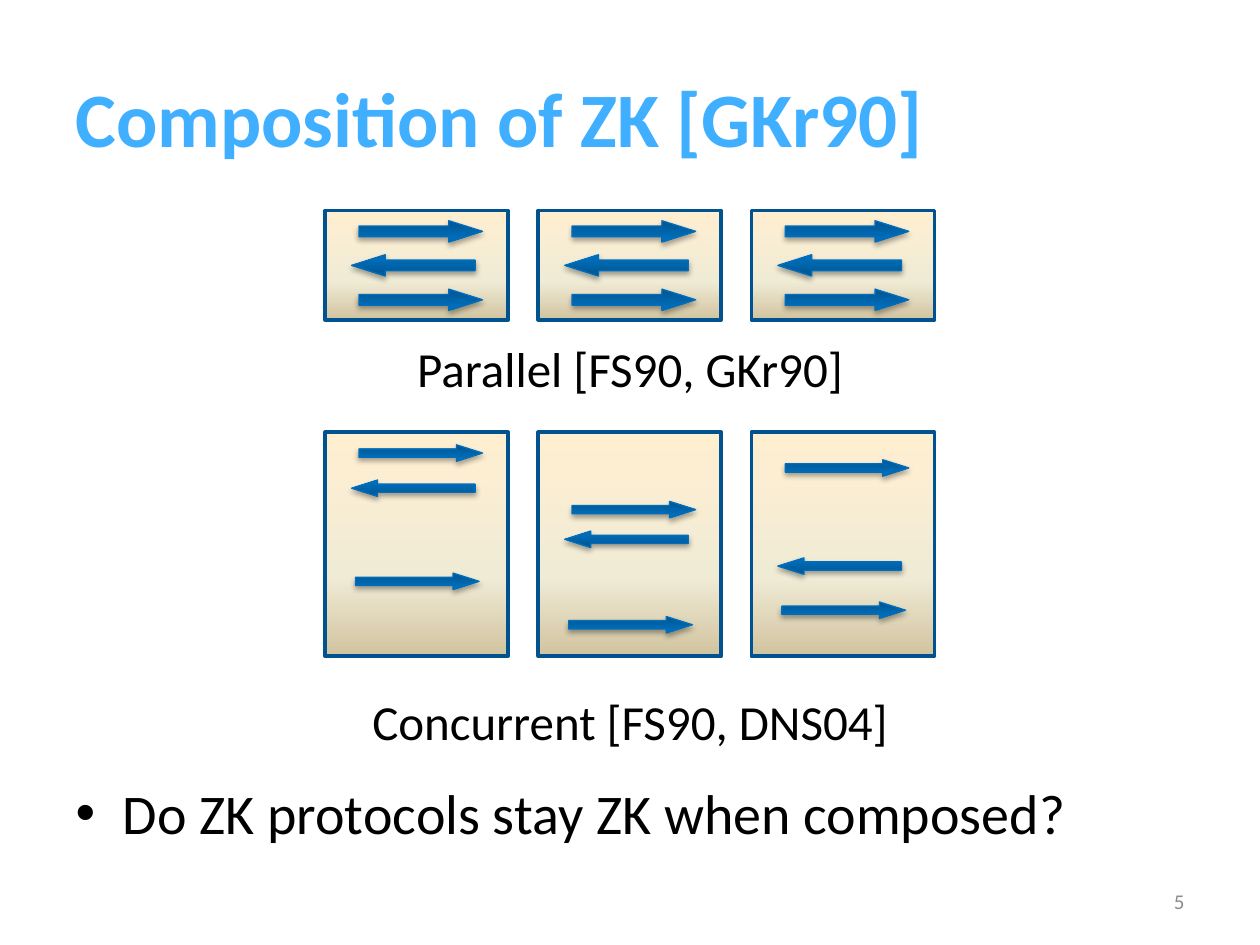
from copy import deepcopy

from lxml import etree
from pptx import Presentation
from pptx.dml.color import RGBColor
from pptx.enum.shapes import MSO_SHAPE
from pptx.enum.text import MSO_ANCHOR, PP_ALIGN
from pptx.oxml.ns import qn
from pptx.util import Pt

RECT, ARROW = MSO_SHAPE.RECTANGLE, MSO_SHAPE.LEFT_ARROW
LEFT, CENTER, RIGHT = PP_ALIGN.LEFT, PP_ALIGN.CENTER, PP_ALIGN.RIGHT
MIDDLE = MSO_ANCHOR.MIDDLE

COLORS = {"title": "40AFFF", "text": "000000", "number": "8C8C8C",
          "box line": "00538E", "arrow line": "006EBC", "shadow": "000000"}

# Content
TITLE = "Composition of ZK [GKr90]"
QUESTION = "Do ZK protocols stay ZK when composed?"
NUMBER = "5"

# Each session lists its messages as (x, y) offsets in its box;
# directions alternate, starting to the right
OUT, BACK, LAST = 19.3, 15.1, 17.4
PARALLEL = [(OUT, 5.8), (BACK, 25.3), (OUT, 44.9)]
COMPOSITIONS = [
    {"caption": "Parallel [FS90, GKr90]", "caption top": 190.1,
     "top": 120.3, "height": 62.6, "arrow height": 12.2,
     "sessions": [PARALLEL] * 3},
    {"caption": "Concurrent [FS90, DNS04]", "caption top": 391.7,
     "top": 247, "height": 128, "arrow height": 9.4,
     "sessions": [
         [(OUT, 7.2), (BACK, 27.3), (LAST, 80.5)],
         [(OUT, 39.5), (BACK, 56.5), (LAST, 105.3)],
         [(OUT, 15.7), (BACK, 71.8), (LAST, 97)]]},
]

# Layout and formats
BOX_LEFT, BOX_W, PITCH = 185.8, 104.6, 121.8
ARROW_W = 70.6
CAPTION_W = 348
BOX_STYLE = {"stops": [(0, "FFEFD1"), (0.65, "F0EBD5"), (1, "D1C39F")],
             "angle": 270, "line": "box line", "width": 2}
ARROW_STYLE = {"stops": [(0, "00548F"), (0.8, "006DBA"), (1, "006DBB")],
               "angle": 90, "line": "arrow line", "width": 0.75}
SHADOW = {"blurRad": Pt(3.1), "dist": Pt(1.8), "dir": 90 * 60000,
          "rotWithShape": 0}
SHADOW_ALPHA = 35000


def rgb(name):
    return RGBColor.from_string(COLORS[name])


def place(sp, *box):
    for name, value in zip(("left", "top", "width", "height"), box):
        setattr(sp, name, Pt(value))


def write(sp, text, size, color, align, anchor=None, bold=False):
    tf = sp.text_frame
    tf.word_wrap = True
    if anchor is not None:
        tf.vertical_anchor = anchor
    p = tf.paragraphs[0]
    p.alignment = align
    p.space_before = Pt(0)
    r = p.add_run()
    r.text = text
    for name, value in {"name": "Calibri", "size": Pt(size), "bold": bold}.items():
        setattr(r.font, name, value)
    r.font.color.rgb = rgb(color)


def draw(shapes, kind, box, style):
    sp = shapes.add_shape(kind, *map(Pt, box))
    sp.shadow.inherit = False
    sp.fill.gradient()
    sp.fill.gradient_angle = style["angle"]
    stops = sp._element.spPr.find(".//" + qn("a:gsLst"))
    stops.append(deepcopy(stops[0]))
    for stop, (position, color) in zip(sp.fill.gradient_stops, style["stops"]):
        stop.position = position
        stop.color.rgb = RGBColor.from_string(color)
    sp.line.color.rgb = rgb(style["line"])
    sp.line.width = Pt(style["width"])
    return sp


def cast_shadow(sp):
    effects = sp._element.spPr.find(qn("a:effectLst"))
    shadow = etree.SubElement(effects, qn("a:outerShdw"),
                              {k: str(v) for k, v in SHADOW.items()})
    color = etree.SubElement(shadow, qn("a:srgbClr"), val=COLORS["shadow"])
    etree.SubElement(color, qn("a:alpha"), val=str(SHADOW_ALPHA))


def add_composition(s, comp):
    shapes = s.shapes.add_group_shape().shapes
    for i, messages in enumerate(comp["sessions"]):
        left, top = BOX_LEFT + i * PITCH, comp["top"]
        draw(shapes, RECT, (left, top, BOX_W, comp["height"]), BOX_STYLE)
        for j, (x, y) in enumerate(messages):
            box = (left + x, top + y, ARROW_W, comp["arrow height"])
            sp = draw(shapes, ARROW, box, ARROW_STYLE)
            sp.adjustments[0], sp.adjustments[1] = 0.5, 1.583
            sp.rotation = 180 if j % 2 == 0 else 0
            cast_shadow(sp)
    sp = shapes.add_textbox(Pt(360 - CAPTION_W / 2), Pt(comp["caption top"]),
                            Pt(CAPTION_W), Pt(41))
    write(sp, comp["caption"], 28, "text", CENTER)


def main():
    prs = Presentation()
    prs.slide_width, prs.slide_height = Pt(720), Pt(540)
    s = prs.slides.add_slide(prs.slide_layouts[1])

    # Title and question
    title, body = s.placeholders
    place(title, 36, 21.6, 648, 90)
    write(title, TITLE, 44, "title", LEFT, MIDDLE, bold=True)
    place(body, 36, 441, 648, 46)
    write(body, QUESTION, 32, "text", LEFT, MIDDLE)

    # Slide number
    sp = s.shapes.add_textbox(Pt(516), Pt(500.4), Pt(168), Pt(28.8))
    write(sp, NUMBER, 12, "number", RIGHT, MIDDLE)

    # Session diagrams
    for comp in COMPOSITIONS:
        add_composition(s, comp)

    prs.save("out.pptx")


if __name__ == "__main__":
    main()
